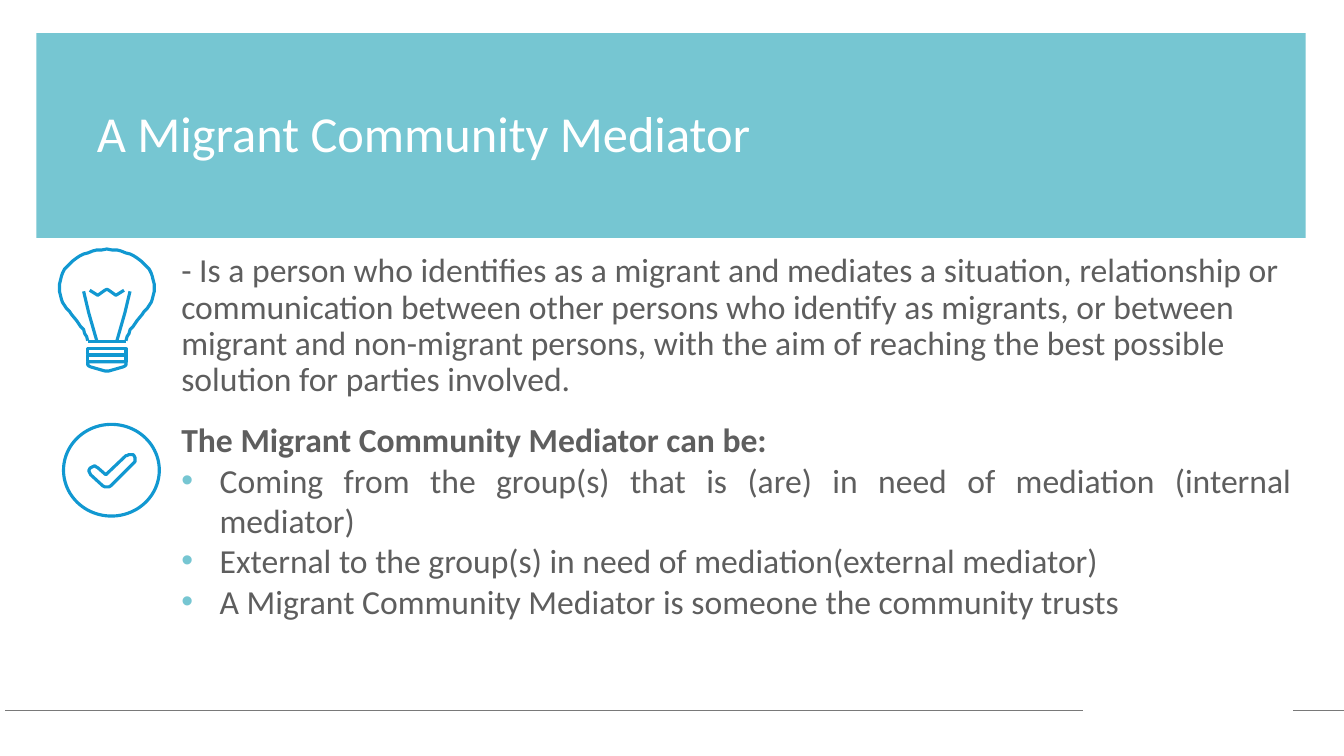
from dataclasses import dataclass

import pptx
import pptx.dml.color
import pptx.enum.shapes
import pptx.enum.text
import pptx.oxml
import pptx.oxml.ns
import pptx.util
from lxml import etree

Inches, Pt = pptx.util.Inches, pptx.util.Pt
RGB = pptx.dml.color.RGBColor
SHAPE = pptx.enum.shapes.MSO_SHAPE
ALIGN = pptx.enum.text.PP_ALIGN
qn = pptx.oxml.ns.qn


@dataclass(frozen=True)
class Theme:
    font: str = "Calibri"
    teal: RGB = RGB(0x76, 0xC6, 0xD2)
    icon: RGB = RGB(0x11, 0x98, 0xD1)
    rule: RGB = RGB(0x79, 0x79, 0x79)
    body: RGB = RGB(0x5E, 0x5E, 0x5E)
    white: RGB = RGB(0xFF, 0xFF, 0xFF)
    title_size: Pt = Pt(36)
    body_size: Pt = Pt(24)
    icon_width: Pt = Pt(2.25)
    rule_width: Pt = Pt(0.5)


theme = Theme()


def write(paragraph, text, size=theme.body_size, color=theme.body, bold=False,
          align=ALIGN.LEFT, spacing=None, bullet=False):
    if bullet:
        properties = paragraph._p.get_or_add_pPr()
        properties.set("marL", str(Inches(0.38)))
        properties.set("indent", str(-Inches(0.38)))
        bullet_color = etree.SubElement(properties, qn("a:buClr"))
        etree.SubElement(bullet_color, qn("a:srgbClr"), val=str(theme.teal))
        etree.SubElement(properties, qn("a:buFont"), typeface="Arial")
        etree.SubElement(properties, qn("a:buChar"), char="•")
    paragraph.alignment = align
    if spacing:
        paragraph.line_spacing = spacing
    run = paragraph.add_run()
    run.text = text
    run.font.name, run.font.size, run.font.bold = theme.font, size, bold
    run.font.color.rgb = color


def outline(shape):
    shape.shadow.inherit = False
    shape.fill.background()
    shape.line.color.rgb = theme.icon
    shape.line.width = theme.icon_width


presentation = pptx.Presentation()
presentation.slide_width, presentation.slide_height = Inches(13.33), Inches(7.5)
slide = presentation.slides.add_slide(presentation.slide_layouts[5])
shapes = slide.shapes

# Title on its band
title = shapes.title
title.left, title.top, title.width, title.height = map(Inches, (0.86, 1.03, 11.55, 0.76))
title.text_frame.vertical_anchor = pptx.enum.text.MSO_ANCHOR.TOP
title.text_frame.auto_size = pptx.enum.text.MSO_AUTO_SIZE.NONE
write(title.text_frame.paragraphs[0], "A Migrant Community Mediator",
      size=theme.title_size, color=theme.white, spacing=0.9)

band = shapes.add_shape(SHAPE.RECTANGLE, Inches(0.36), Inches(0.33), Inches(12.59), Inches(2.03))
band.shadow.inherit = False
band.fill.solid()
band.fill.fore_color.rgb = theme.teal
band.line.fill.background()
title.element.addprevious(band.element)

# Footer rule in two parts, and the collar line of the bulb
for start, end, y, color, width in [
    (10.74, 0.05, 7.05, theme.rule, theme.rule_width),
    (13.33, 12.82, 7.05, theme.rule, theme.rule_width),
    (0.87, 1.25, 3.39, theme.icon, theme.icon_width),
]:
    rule = shapes.add_connector(pptx.enum.shapes.MSO_CONNECTOR.STRAIGHT,
                                Inches(start), Inches(y), Inches(end), Inches(y))
    rule.line.color.rgb = color
    rule.line.width = width
    etree.SubElement(rule.element.spPr, qn("a:effectLst"))

# Definition and list
definition = [
    ("- Is a person who identifies as a migrant and mediates a situation, relationship or "
     "communication between other persons who identify as migrants, or between migrant and "
     "non-migrant persons, with the aim of reaching the best possible solution for parties "
     "involved.", dict(spacing=0.9)),
]
listed = dict(align=ALIGN.JUSTIFY, bullet=True)
kinds = [
    ("The Migrant Community Mediator can be:", dict(align=ALIGN.JUSTIFY, bold=True)),
    ("Coming from the group(s) that is (are) in need of mediation (internal mediator)", listed),
    ("External to the group(s) in need of mediation(external mediator)", listed),
    ("A Migrant Community Mediator is someone the community trusts", listed),
]
for top, height, paragraphs in [(2.47, 1.6, definition), (4.11, 2.12, kinds)]:
    frame = shapes.add_textbox(Inches(1.7), Inches(top), Inches(11.21), Inches(height)).text_frame
    frame.word_wrap = True
    for index, (text, style) in enumerate(paragraphs):
        write(frame.add_paragraph() if index else frame.paragraphs[0], text, **style)

# Threads of the bulb and ring of the check mark
for form, left, top, width, height in [
    (SHAPE.RECTANGLE, 0.87, 3.46, 0.38, 0.06),
    (SHAPE.RECTANGLE, 0.87, 3.53, 0.38, 0.06),
    (SHAPE.OVAL, 0.63, 4.21, 0.95, 0.91),
]:
    outline(shapes.add_shape(form, Inches(left), Inches(top), Inches(width), Inches(height)))

# Free outlines in hundredths of an inch; the bulb is mirrored about its axis
def_axis = 106
glass_half = [
    (87, 338), (86, 334), (84, 331), (83, 327), (80, 324), (78, 321), (76, 318), (71, 312),
    (69, 309), (66, 306), (64, 303), (62, 300), (61, 297), (60, 293), (59, 289), (59, 285),
    (59, 282), (60, 278), (61, 274), (62, 271), (64, 267), (67, 264), (70, 261), (72, 259),
    (76, 256), (79, 254), (83, 252), (87, 251), (92, 249), (96, 248), (101, 248), (106, 247),
]
cap_half = [(87, 359), (87, 362), (88, 363), (90, 364), (104, 368), (106, 368)]
wire_half = [(89, 288), (97, 293), (104, 288), (106, 287)]
filament = [(83, 289), (88, 310), (96, 338)]
tick = [
    (106, 483), (108, 483), (110, 482), (133, 459), (134, 458), (134, 456), (134, 454),
    (133, 452), (132, 451), (130, 451), (128, 451), (126, 452), (125, 452), (105, 471),
    (97, 464), (95, 463), (94, 462), (92, 463), (90, 464), (89, 465), (88, 467), (89, 469),
    (90, 471), (102, 482), (104, 483),
]
full = [half + [(2 * def_axis - x, y) for x, y in half[-2::-1]]
        for half in (glass_half, cap_half, wire_half)]
glass, cap, wire = full
right_filament = [(2 * def_axis - x, y) for x, y in filament]
for points, closed in [(glass, False), (cap, True), (wire, False),
                       (filament, False), (right_filament, False), (tick, True)]:
    builder = shapes.build_freeform(*points[0], scale=Inches(0.01))
    builder.add_line_segments(points[1:], close=closed)
    outline(builder.convert_to_shape())

presentation.save("out.pptx")
